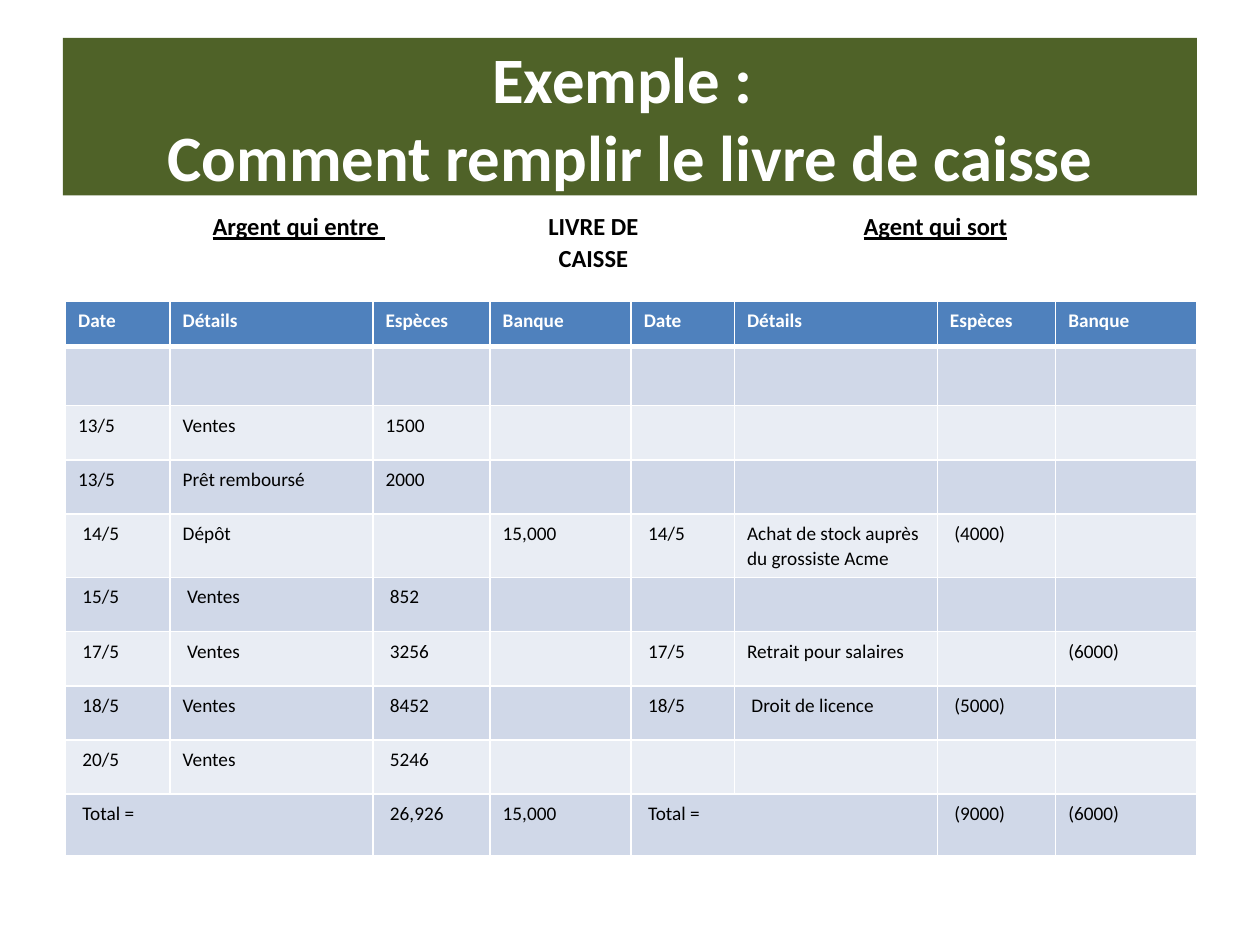
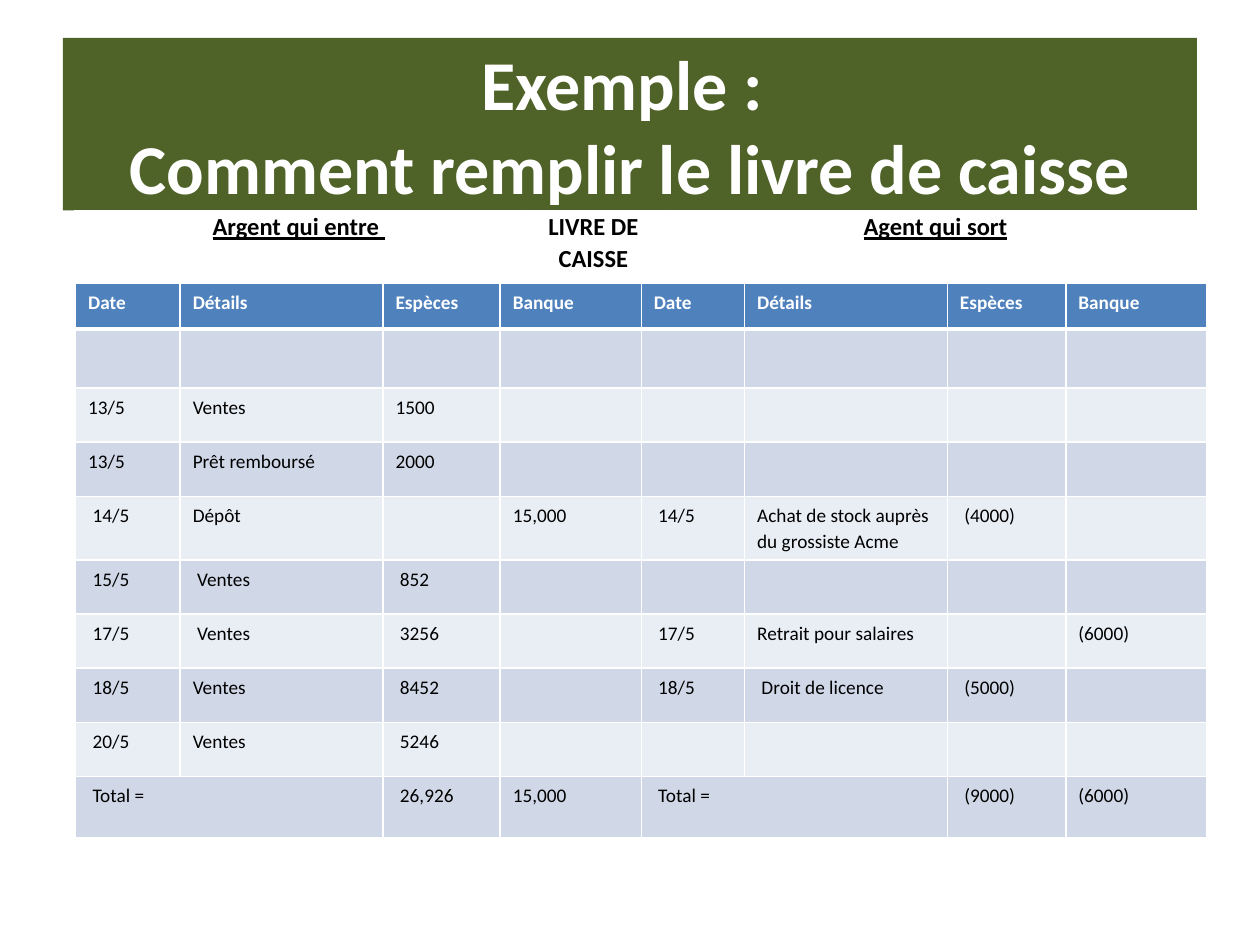
"""Builds two slides showing how to fill in a cash book."""
from lxml import etree
from pptx import Presentation
from pptx import util as u
from pptx.dml.color import RGBColor
from pptx.enum import shapes, text
from pptx.oxml import ns

COLOURS = {"band": "4F6228", "header": "4F81BD", "odd": "D0D8E8",
           "even": "E9EDF4", "white": "FFFFFF", "black": "000000"}
EDGES = {"lnL": 1, "lnR": 1, "lnT": 1, "lnB": 1}
HEADER_EDGES = {**EDGES, "lnB": 3}

HEADINGS = ["Argent qui entre ", "LIVRE DE CAISSE", "Agent qui sort"]
HEADING_WIDTHS = [3.56, 1.12, 4.31]
LEDGER_WIDTHS = [0.83, 1.61, 0.93, 1.12, 0.82, 1.61, 0.94, 1.12]
LEDGER_HEIGHTS = [0.36, 0.47, 0.43, 0.43, 0.49, 0.43, 0.43, 0.43, 0.43, 0.49]
LEDGER = [
    ["Date", "Détails", "Espèces", "Banque"] * 2,
    [""] * 8,
    ["13/5", "Ventes", "1500", "", "", "", "", ""],
    ["13/5", "Prêt remboursé", "2000", "", "", "", "", ""],
    [" 14/5", "Dépôt", "", "15,000", " 14/5",
     "Achat de stock auprès du grossiste Acme", " (4000)", ""],
    [" 15/5", " Ventes", " 852", "", "", "", "", ""],
    [" 17/5", " Ventes", " 3256", "", " 17/5", "Retrait pour salaires", "", "(6000)"],
    [" 18/5", "Ventes", " 8452", "", " 18/5", " Droit de licence", " (5000)", ""],
    [" 20/5", "Ventes", " 5246", "", "", "", "", ""],
    [" Total =", "", " 26,926", "15,000", " Total =", "", " (9000)", "(6000)"],
]
LAYOUTS = [
    {"band_height": 1.25, "title_size": 37, "ledger_at": (0.52, 2.39)},
    {"band_height": 1.37, "title_size": 40, "ledger_at": (0.6, 2.25)},
]


def write(frame, words, colour, align, spacing, **font_values):
    frame.text = words
    for paragraph in frame.paragraphs:
        paragraph.alignment = align
        paragraph.line_spacing = spacing
        paragraph.font.color.rgb = RGBColor.from_string(COLOURS[colour])
        for name, value in {"name": "Calibri", **font_values}.items():
            setattr(paragraph.font, name, value)
            for run in paragraph.runs:
                setattr(run.font, name, value)


def add_grid(slide, at, widths, heights, edges_by_row):
    left, top = map(u.Inches, at)
    grid = slide.shapes.add_table(len(heights), len(widths), left, top,
                                  u.Inches(sum(widths)), u.Inches(sum(heights))).table
    grid.first_row = grid.horz_banding = False
    for column, width in zip(grid.columns, widths):
        column.width = u.Inches(width)
    for row, height, edges in zip(grid.rows, heights, edges_by_row):
        row.height = u.Inches(height)
        for cell in row.cells:
            for edge, points in edges.items():
                line = etree.SubElement(cell._tc.get_or_add_tcPr(), ns.qn(f"a:{edge}"),
                                        w=str(u.Pt(points)))
                fill = etree.SubElement(line, ns.qn("a:solidFill"))
                etree.SubElement(fill, ns.qn("a:srgbClr"), val=COLOURS["white"])
    return grid


deck = Presentation()
deck.slide_width, deck.slide_height = u.Inches(10), u.Inches(7.5)

for layout in LAYOUTS:
    slide = deck.slides.add_slide(deck.slide_layouts[6])

    band = slide.shapes.add_shape(shapes.MSO_SHAPE.RECTANGLE, u.Inches(0.5), u.Inches(0.3),
                                  u.Inches(9), u.Inches(layout["band_height"]))
    band.shadow.inherit = False
    band.fill.solid()
    band.fill.fore_color.rgb = RGBColor.from_string(COLOURS["band"])
    band.line.fill.background()
    band.text_frame.vertical_anchor = text.MSO_ANCHOR.MIDDLE
    write(band.text_frame, "Exemple : \nComment remplir le livre de caisse", "white",
          text.PP_ALIGN.CENTER, 1.0, size=u.Pt(layout["title_size"]), bold=True)

    headings = add_grid(slide, (0.59, 1.67), HEADING_WIDTHS, [0.49], [HEADER_EDGES])
    for cell, heading in zip(headings.iter_cells(), HEADINGS):
        cell.fill.background()
        margins = {"margin_left": 0.07, "margin_right": 0.07, "margin_top": 0, "margin_bottom": 0}
        for side, inches in margins.items():
            setattr(cell, side, u.Inches(inches))
        write(cell.text_frame, heading, "black", text.PP_ALIGN.CENTER, 1.07,
              size=u.Pt(14), bold=True, underline=heading.startswith("A"))

    ledger = add_grid(slide, layout["ledger_at"], LEDGER_WIDTHS, LEDGER_HEIGHTS,
                      [HEADER_EDGES] + [EDGES] * (len(LEDGER) - 1))
    for index, (row, entries) in enumerate(zip(ledger.rows, LEDGER)):
        is_header = index == 0
        shade = "header" if is_header else ("even", "odd")[index % 2]
        for cell, entry in zip(row.cells, entries):
            cell.fill.solid()
            cell.fill.fore_color.rgb = RGBColor.from_string(COLOURS[shade])
            write(cell.text_frame, entry, "white" if is_header else "black",
                  text.PP_ALIGN.LEFT, 1.07, size=u.Pt(11), bold=is_header)
    total_row = len(LEDGER) - 1
    for first in (0, 4):
        ledger.cell(total_row, first).merge(ledger.cell(total_row, first + 1))

deck.save("out.pptx")
